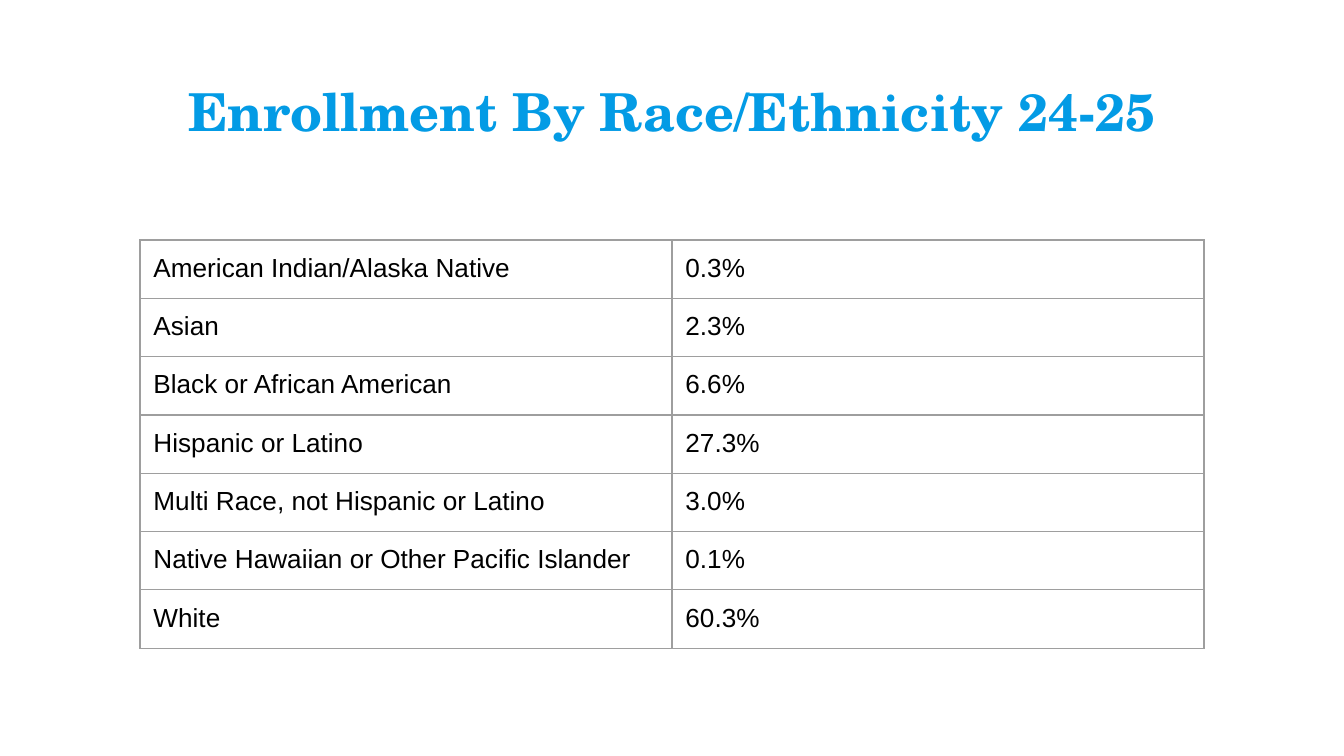
from lxml.etree import SubElement
from pptx import Presentation
from pptx.dml.color import RGBColor
from pptx.enum.text import PP_ALIGN
from pptx.oxml.ns import qn
from pptx.util import Emu, Inches, Pt

BLUE = RGBColor(0x03, 0x9B, 0xE5)
BLACK = RGBColor(0x00, 0x00, 0x00)
GRAY = RGBColor(0x9E, 0x9E, 0x9E)
INSET = Inches(0.1)

ENROLLMENT = [
    ("American Indian/Alaska Native", "0.3%"),
    ("Asian", "2.3%"),
    ("Black or African American", "6.6%"),
    ("Hispanic or Latino", "27.3%"),
    ("Multi Race, not Hispanic or Latino", "3.0%"),
    ("Native Hawaiian or Other Pacific Islander", "0.1%"),
    ("White", "60.3%"),
]


def px(n):
    """Turn px into EMU, with 1344 px across 10 inches."""
    return Emu(round(n * Inches(10) / 1344))


def style_text(p, font, size, color, bold=False):
    """Format every run of a paragraph."""
    for r in p.runs:
        r.font.name = font
        r.font.size = Pt(size)
        r.font.bold = bold
        r.font.color.rgb = color


def set_insets(box):
    """Give a cell or text frame equal insets."""
    box.margin_left = box.margin_right = INSET
    box.margin_top = box.margin_bottom = INSET


def add_title(s, text, x, y, w, h):
    """Add the centred heading."""
    tf = s.shapes.add_textbox(px(x), px(y), px(w), px(h)).text_frame
    tf.word_wrap = True
    set_insets(tf)
    p = tf.paragraphs[0]
    p.text = text
    p.alignment = PP_ALIGN.CENTER
    style_text(p, "TeX Gyre Schola", 28, BLUE, bold=True)


def add_borders(cell):
    """Draw a thin line on all four sides of a cell."""
    tcPr = cell._tc.get_or_add_tcPr()
    for side in ("a:lnL", "a:lnR", "a:lnT", "a:lnB"):
        ln = SubElement(tcPr, qn(side), w=str(Pt(0.75)))
        fill = SubElement(ln, qn("a:solidFill"))
        SubElement(fill, qn("a:srgbClr"), val=str(GRAY))


def add_data_table(s, rows, x, y, w, row_h):
    """Add a plain bordered table with equal columns and rows."""
    shape = s.shapes.add_table(len(rows), len(rows[0]), px(x), px(y),
                               px(w), px(row_h * len(rows)))
    table = shape.table
    table.first_row = table.horz_banding = False
    for i, row in enumerate(rows):
        for j, text in enumerate(row):
            cell = table.cell(i, j)
            cell.text = text
            set_insets(cell)
            style_text(cell.text_frame.paragraphs[0], "Arial", 14, BLACK)
            add_borders(cell)
            cell.fill.background()


def main():
    """Build the enrollment slide."""
    prs = Presentation()
    prs.slide_width, prs.slide_height = px(1344), px(756)
    s = prs.slides.add_slide(prs.slide_layouts[6])
    add_title(s, "Enrollment By Race/Ethnicity 24-25", 46, 66, 1252, 85)
    add_data_table(s, ENROLLMENT, 140, 240, 1064, 56)
    prs.save("out.pptx")


if __name__ == "__main__":
    main()
